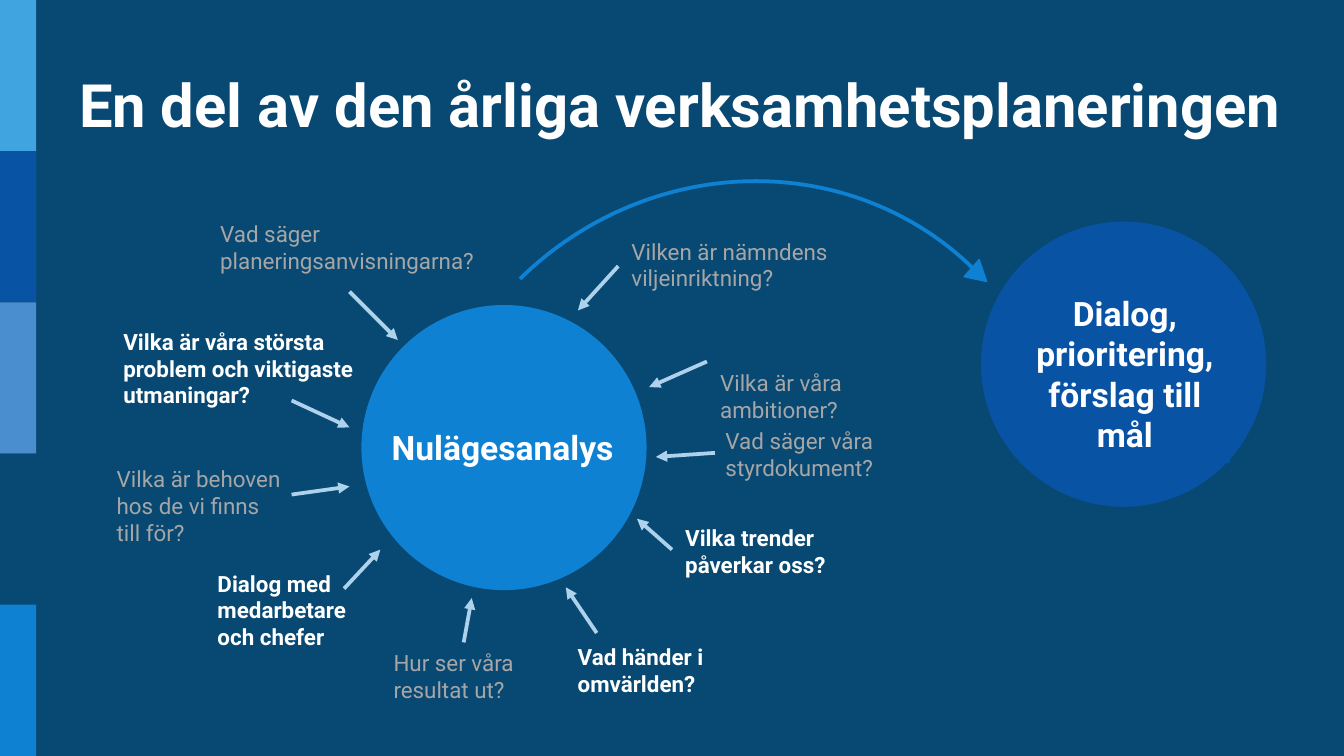
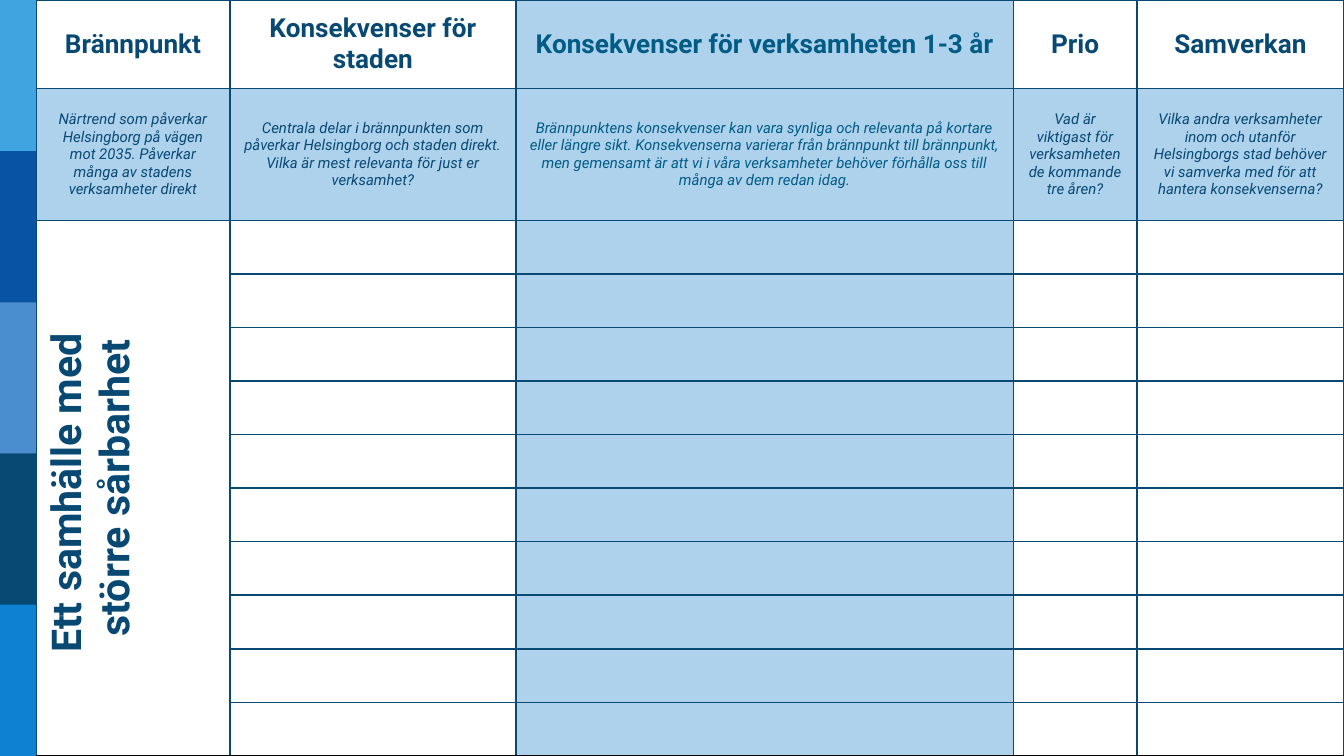
import pptx
import pptx.util
import pptx.dml.color
import pptx.enum.shapes
import pptx.enum.text
import pptx.oxml
import pptx.oxml.ns
from dataclasses import dataclass

Inches = pptx.util.Inches
Pt = pptx.util.Pt
Shape = pptx.enum.shapes.MSO_SHAPE
Align = pptx.enum.text.PP_ALIGN
Anchor = pptx.enum.text.MSO_ANCHOR


@dataclass(frozen=True)
class Theme:
    font: str = "Roboto"
    navy: str = "084973"
    royal: str = "0953A5"
    sky: str = "40A4E1"
    steel: str = "4B8ECF"
    blue: str = "0F81D3"
    pale: str = "AED1EC"
    teal: str = "005C85"
    white: str = "FFFFFF"
    grey: str = "A6A6A6"
    black: str = "000000"
    title_size: int = 32
    vertical_size: int = 22
    circle_size: int = 18
    header_size: int = 14
    question_size: int = 12
    help_size: int = 8


THEME = Theme()
WIDTH = 10
HEIGHT = WIDTH * 9 / 16
BAND_WIDTH = 0.27
BANDS = [THEME.sky, THEME.royal, THEME.steel, THEME.navy, THEME.blue]

TITLE = "En del av den årliga verksamhetsplaneringen"
ANALYSIS = "Nulägesanalys"
DIALOGUE = "Dialog, prioritering, förslag till mål"
CIRCLE_DIAMETER = 2.08

QUESTIONS = [
    ("Vad säger planeringsanvisningarna?", False, (1.54, 1.59, 2.33, 0.5)),
    ("Vilka är våra största problem och viktigaste utmaningar?", True, (0.82, 2.39, 2.06, 0.71)),
    ("Vilka är behoven hos de vi finns till för?", False, (0.77, 3.41, 1.46, 0.71)),
    ("Dialog med medarbetare och chefer", True, (1.52, 4.19, 1.46, 0.73)),
    ("Hur ser våra resultat ut?", False, (2.83, 4.78, 1.24, 0.5)),
    ("Vad händer i omvärlden?", True, (4.2, 4.74, 1.94, 0.5)),
    ("Vilka trender påverkar oss?", True, (5, 3.85, 1.73, 0.5)),
    ("Vad säger våra styrdokument?", False, (5.3, 3.13, 2.3, 0.5)),
    ("Vilka är våra \vambitioner?", False, (5.26, 2.7, 5, 0.5)),
    ("Vilken är nämndens viljeinriktning?", False, (4.6, 1.72, 2.28, 0.5)),
]

ARROWS = [
    ((2.6, 2.17), (2.96, 2.53)),
    ((2.17, 2.98), (2.6, 3.18)),
    ((2.56, 4.38), (2.83, 4.09)),
    ((2.17, 3.68), (2.6, 3.62)),
    ((3.45, 4.78), (3.51, 4.45)),
    ((4.44, 4.71), (4.21, 4.37)),
    ((5, 4.09), (4.74, 3.86)),
    ((5.32, 3.37), (4.88, 3.4)),
    ((5.26, 2.69), (4.83, 2.88)),
    ((4.6, 1.98), (4.3, 2.31)),
]

COLUMNS = [
    ("Brännpunkt", 1.44,
     "Närtrend som påverkar Helsingborg på vägen mot 2035. "
     "Påverkar många av stadens verksamheter direkt"),
    ("Konsekvenser för staden", 2.13,
     "Centrala delar i brännpunkten som påverkar Helsingborg och staden direkt. "
     "Vilka är mest relevanta för just er verksamhet?"),
    ("Konsekvenser för verksamheten 1-3 år", 3.7,
     "Brännpunktens konsekvenser kan vara synliga och relevanta på kortare eller längre sikt. "
     "Konsekvenserna varierar från brännpunkt till brännpunkt, men gemensamt är att vi i våra "
     "verksamheter behöver förhålla oss till många av dem redan idag."),
    ("Prio", 0.92, "Vad är viktigast för verksamheten de kommande tre åren?"),
    ("Samverkan", 1.54,
     "Vilka andra verksamheter inom och utanför Helsingborgs stad behöver vi samverka med "
     "för att hantera konsekvenserna?"),
]
FOCUS = "Ett samhälle med \vstörre sårbarhet"
FOCUS_COLUMN = 2
HEADER_HEIGHTS = [0.66, 0.98]
BODY_ROWS = 10
ROW_HEIGHTS = HEADER_HEIGHTS + [(HEIGHT - sum(HEADER_HEIGHTS)) / BODY_ROWS] * BODY_ROWS


def rgb(color):
    return pptx.dml.color.RGBColor.from_string(color)


def write(text_frame, text, size, color, bold=False, italic=False, align=Align.LEFT):
    text_frame.text = text
    paragraph = text_frame.paragraphs[0]
    paragraph.alignment = align
    for run in paragraph.runs:
        run.font.name = THEME.font
        run.font.size = Pt(size)
        run.font.bold = bold
        run.font.italic = italic
        run.font.color.rgb = rgb(color)


def add_text(slide, box, text, size, color, bold=False, align=Align.LEFT, anchor=Anchor.TOP):
    shape = slide.shapes.add_textbox(*map(Inches, box))
    shape.text_frame.word_wrap = True
    shape.text_frame.vertical_anchor = anchor
    write(shape.text_frame, text, size, color, bold, align=align)
    return shape


def add_filled(slide, kind, box, fill=None, line=None, line_width=0.75, rotation=0):
    shape = slide.shapes.add_shape(kind, *map(Inches, box))
    shape.shadow.inherit = False
    shape.rotation = rotation
    if fill:
        shape.fill.solid()
        shape.fill.fore_color.rgb = rgb(fill)
    else:
        shape.fill.background()
    if line:
        shape.line.color.rgb = rgb(line)
        shape.line.width = Pt(line_width)
    else:
        shape.line.fill.background()
    return shape


def add_arrow(slide, start, end):
    connector = slide.shapes.add_connector(
        pptx.enum.shapes.MSO_CONNECTOR.STRAIGHT, *map(Inches, start + end))
    connector.line.color.rgb = rgb(THEME.pale)
    connector.line.width = Pt(2)
    namespace = pptx.oxml.ns.nsdecls("a")
    properties = connector._element.spPr
    line = properties.find(pptx.oxml.ns.qn("a:ln"))
    line.append(pptx.oxml.parse_xml(f'<a:tailEnd {namespace} type="triangle"/>'))
    properties.append(pptx.oxml.parse_xml(f"<a:effectLst {namespace}/>"))


def add_banded_slide(presentation):
    slide = presentation.slides.add_slide(presentation.slide_layouts[6])
    slide.background.fill.solid()
    slide.background.fill.fore_color.rgb = rgb(THEME.navy)
    band_height = HEIGHT / len(BANDS)
    for index, color in enumerate(BANDS):
        add_filled(slide, Shape.RECTANGLE, (0, index * band_height, BAND_WIDTH, band_height), color)
    return slide


def add_circle(slide, left, top, color):
    add_filled(slide, Shape.OVAL, (left, top, CIRCLE_DIAMETER, CIRCLE_DIAMETER), color, color, 3)


def build_planning_slide(presentation):
    slide = add_banded_slide(presentation)
    add_circle(slide, 7.32, 1.67, THEME.royal)
    dialogue_box = (7.59, 2.13, 1.56, 1.31)
    dialogue = add_filled(slide, Shape.RECTANGLE, dialogue_box, THEME.royal, THEME.royal)
    dialogue.text_frame.word_wrap = True
    dialogue.text_frame.vertical_anchor = Anchor.TOP
    write(dialogue.text_frame, DIALOGUE, THEME.circle_size, THEME.white, True, align=Align.CENTER)
    add_text(slide, (0.49, 0.15, 9.23, 0.94), TITLE, THEME.title_size, THEME.white, True,
             anchor=Anchor.BOTTOM)
    for text, highlighted, box in QUESTIONS:
        color = THEME.white if highlighted else THEME.grey
        add_text(slide, box, text, THEME.question_size, color, highlighted)
    add_circle(slide, 2.71, 2.29, THEME.blue)
    add_text(slide, (1.24, 3.13, 5, 0.4), ANALYSIS, THEME.circle_size, THEME.white, True,
             Align.CENTER)
    for start, end in ARROWS:
        add_arrow(slide, start, end)
    add_filled(slide, Shape.ARC, (3.06, 1.4, 4.92, 4.71), line=THEME.blue, line_width=2,
               rotation=315.5)
    add_filled(slide, Shape.ISOSCELES_TRIANGLE, (7.2, 1.97, 0.17, 0.15), THEME.blue, THEME.blue,
               rotation=131.5)


def style_cell(cell, fill, bottom_color):
    properties = cell._tc.get_or_add_tcPr()
    edges = {"lnL": THEME.navy, "lnR": THEME.navy, "lnT": THEME.navy, "lnB": bottom_color}
    for edge, color in edges.items():
        properties.append(pptx.oxml.parse_xml(
            f'<a:{edge} {pptx.oxml.ns.nsdecls("a")} w="{Pt(1)}"><a:solidFill>'
            f'<a:srgbClr val="{color}"/></a:solidFill></a:{edge}>'))
    cell.fill.solid()
    cell.fill.fore_color.rgb = rgb(fill)
    cell.vertical_anchor = Anchor.MIDDLE


def build_consequence_slide(presentation):
    slide = add_banded_slide(presentation)
    last_row = len(ROW_HEIGHTS) - 1
    table = slide.shapes.add_table(
        len(ROW_HEIGHTS), len(COLUMNS), Inches(BAND_WIDTH), 0,
        Inches(WIDTH - BAND_WIDTH), Inches(HEIGHT)).table
    table.first_row = False
    table.horz_banding = False
    for row, height in zip(table.rows, ROW_HEIGHTS):
        row.height = Inches(height)
    focus = table.cell(len(HEADER_HEIGHTS), 0)
    focus.merge(table.cell(last_row, 0))

    for column_index, (heading, width, explanation) in enumerate(COLUMNS):
        table.columns[column_index].width = Inches(width)
        emphasised = column_index == FOCUS_COLUMN
        for row_index in range(len(ROW_HEIGHTS)):
            cell = table.cell(row_index, column_index)
            cell.text_frame.paragraphs[0].font.size = Pt(THEME.help_size)
            if cell.is_spanned:
                continue
            fill = THEME.pale if emphasised or row_index == 1 else THEME.white
            at_bottom = row_index == last_row or cell.is_merge_origin
            style_cell(cell, fill, THEME.black if at_bottom else THEME.navy)
        color = THEME.teal if emphasised else THEME.navy
        write(table.cell(0, column_index).text_frame, heading, THEME.header_size, color,
              bold=True, align=Align.CENTER)
        write(table.cell(1, column_index).text_frame, explanation, THEME.help_size, color,
              italic=True, align=Align.CENTER)

    write(focus.text_frame, FOCUS, THEME.vertical_size, THEME.navy, bold=True, align=Align.CENTER)
    focus._tc.get_or_add_tcPr().set("vert", "vert270")


def main():
    presentation = pptx.Presentation()
    presentation.slide_width = Inches(WIDTH)
    presentation.slide_height = Inches(HEIGHT)
    build_planning_slide(presentation)
    build_consequence_slide(presentation)
    presentation.save("out.pptx")


if __name__ == "__main__":
    main()
